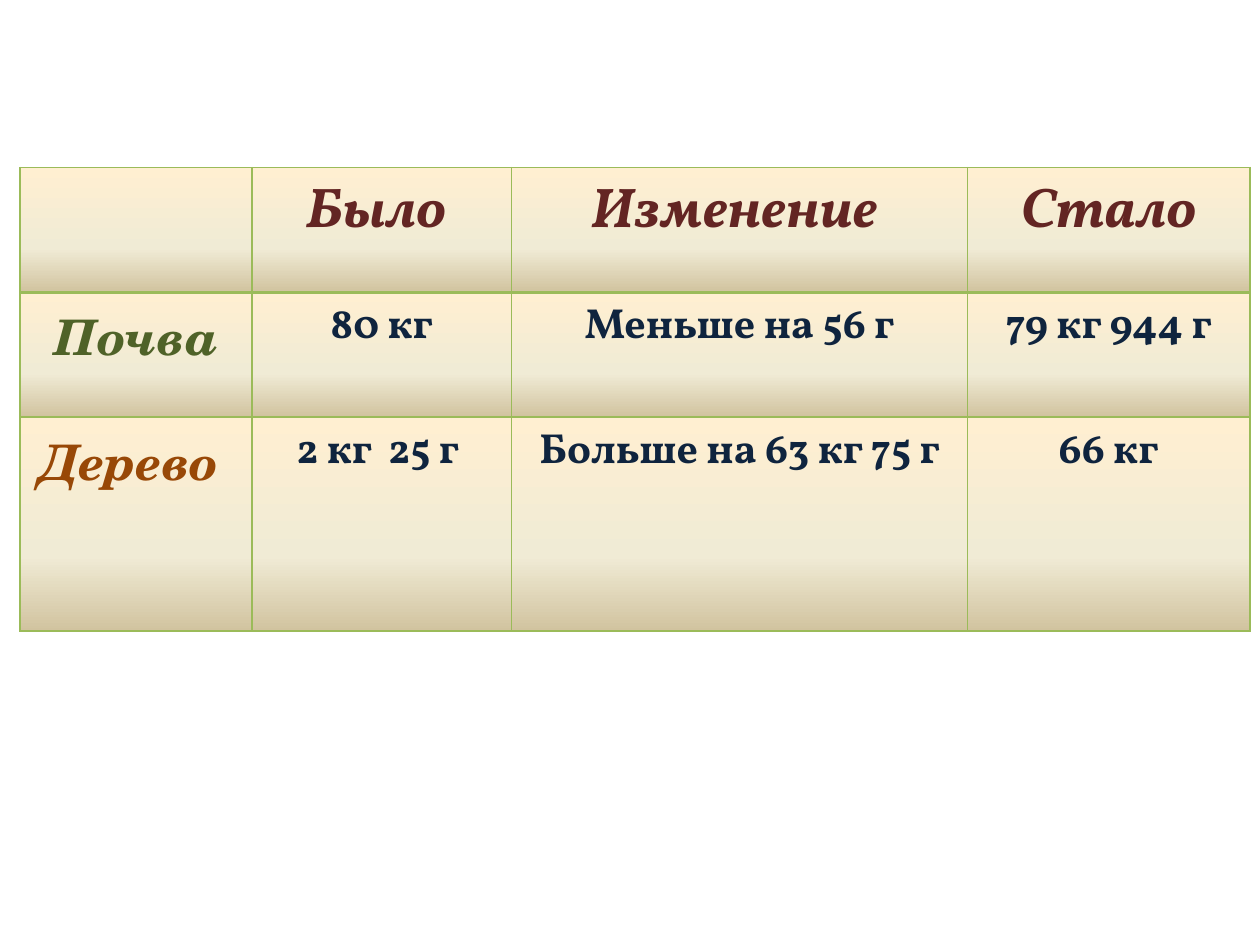
"""Build a slide with a table of soil and tree weights before and after."""
from pptx import Presentation
from pptx.dml.color import RGBColor
from pptx.enum import text
from pptx.oxml import parse_xml
from pptx.oxml.ns import nsdecls
from pptx.util import Inches, Pt

MAROON = RGBColor(0x63, 0x25, 0x23)
OLIVE = RGBColor(0x4F, 0x62, 0x28)
BROWN = RGBColor(0x98, 0x48, 0x07)
NAVY = RGBColor(0x0F, 0x24, 0x3E)
GREEN = RGBColor(0x9B, 0xBB, 0x59)
GRADIENT = [
    (0, RGBColor(0xFF, 0xEF, 0xD1)),
    (65, RGBColor(0xF0, 0xEB, 0xD5)),
    (100, RGBColor(0xD1, 0xC3, 0x9F)),
]

ROWS = [
    ["", "Было ", "Изменение ", "Стало"],
    ["Почва", "80 кг", "Меньше на 56 г", "79 кг 944 г"],
    ["Дерево ", "2 кг  25 г ", "Больше на 63 кг 75 г", "66 кг"],
]
LABEL_COLORS = [MAROON, OLIVE, BROWN]
COLUMN_WIDTHS = [1.84, 2.06, 3.62, 2.24]
ROW_HEIGHTS = [0.99, 0.99, 1.7]
LEFT, TOP = 0.16, 1.33


def cell_style(row):
    """Return font name, size, colour and italic for body and label cells."""
    def style(column):
        if row == 0:
            return "Vollkorn", 32, MAROON, True
        if column == 0:
            return "TeX Gyre Schola", 28, LABEL_COLORS[row], True
        return "Vollkorn", 24, NAVY, False
    return style


def decorate(cell, bottom_width):
    """Give a cell its borders and gradient fill."""
    properties = cell._tc.get_or_add_tcPr()
    for side, width in (("L", 1), ("R", 1), ("T", 1), ("B", bottom_width)):
        properties.append(parse_xml(
            f'<a:ln{side} {nsdecls("a")} w="{Pt(width)}"><a:solidFill>'
            f'<a:srgbClr val="{GREEN}"/></a:solidFill></a:ln{side}>'))
    stops = "".join(
        f'<a:gs pos="{position * 1000}"><a:srgbClr val="{color}"/></a:gs>'
        for position, color in GRADIENT)
    properties.append(parse_xml(
        f'<a:gradFill {nsdecls("a")}><a:gsLst>{stops}</a:gsLst>'
        '<a:lin ang="5400000" scaled="0"/></a:gradFill>'))


def write(cell, words, name, size, color, italic):
    """Put centred bold text in a cell."""
    paragraph = cell.text_frame.paragraphs[0]
    paragraph.text = words
    paragraph.alignment = text.PP_ALIGN.CENTER
    font = paragraph.runs[0].font if words else paragraph.font
    font.name, font.size, font.bold, font.italic = name, Pt(size), True, italic
    font.color.rgb = color


def main():
    presentation = Presentation()
    presentation.slide_width, presentation.slide_height = Inches(10), Inches(7.5)
    slide = presentation.slides.add_slide(presentation.slide_layouts[6])
    table = slide.shapes.add_table(
        len(ROWS), len(COLUMN_WIDTHS), Inches(LEFT), Inches(TOP),
        Inches(sum(COLUMN_WIDTHS)), Inches(sum(ROW_HEIGHTS))).table
    table.horz_banding = False
    for column, width in zip(table.columns, COLUMN_WIDTHS):
        column.width = Inches(width)
    for row, height in zip(table.rows, ROW_HEIGHTS):
        row.height = Inches(height)
    for row_index, row in enumerate(ROWS):
        style = cell_style(row_index)
        for column_index, words in enumerate(row):
            cell = table.cell(row_index, column_index)
            write(cell, words, *style(column_index))
            decorate(cell, 2 if row_index == 0 else 1)
    presentation.save("out.pptx")


if __name__ == "__main__":
    main()
